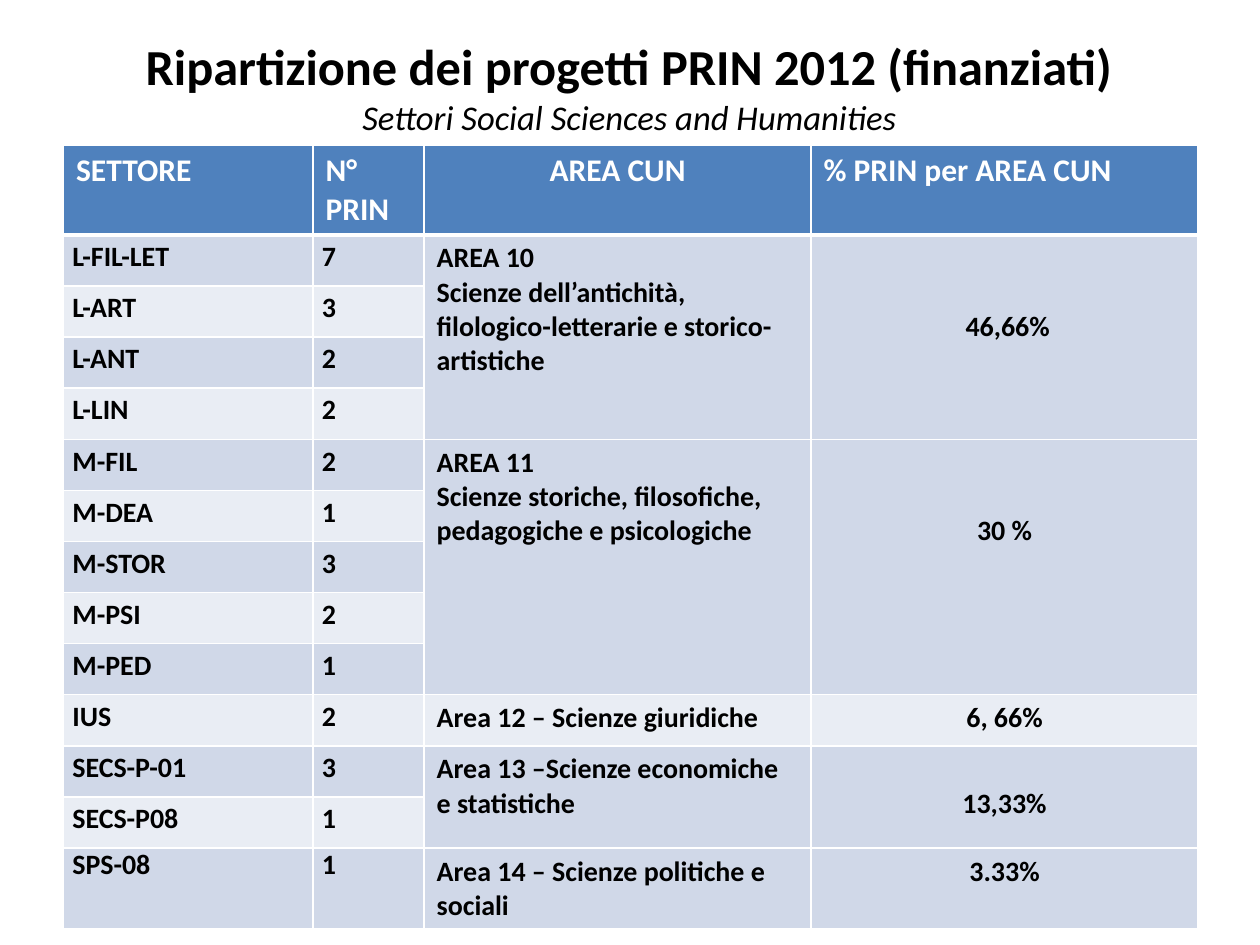
from copy import deepcopy
from dataclasses import dataclass

from lxml import etree
from pptx import Presentation
from pptx.dml.color import RGBColor
from pptx.enum.text import MSO_ANCHOR, MSO_AUTO_SIZE, PP_ALIGN
from pptx.oxml.ns import qn
from pptx.util import Cm, Pt

LEFT, CENTER = PP_ALIGN.LEFT, PP_ALIGN.CENTER
MIDDLE = MSO_ANCHOR.MIDDLE
NO_AUTOFIT = MSO_AUTO_SIZE.NONE
TITLE_ONLY = 5


@dataclass(frozen=True)
class Theme:
    font: str = "Calibri"
    ink: str = "000000"
    white: str = "FFFFFF"
    header: str = "4F81BD"
    bands: tuple[str, str] = ("E9EDF4", "D0D8E8")
    title_size: float = 28.8
    subtitle_size: float = 19.8
    header_size: float = 18
    body_size: float = 16
    grid_line: float = 1
    header_line: float = 3


@dataclass(frozen=True)
class Area:
    name: str
    share: str
    sectors: tuple[tuple[str, int], ...]
    share_line: int = 0  # text line of the cell on which the share stands
    sector_spacing: float = 1.15


THEME = Theme()
HEADERS = (("SETTORE", LEFT), ("N° PRIN", LEFT),
           ("AREA CUN", CENTER), ("% PRIN per AREA CUN", LEFT))
AREAS = (
    Area("AREA 10\nScienze dell’antichità, filologico-letterarie e storico-artistiche",
         " 46,66%", (("L-FIL-LET", 7), ("L-ART", 3), ("L-ANT", 2), ("L-LIN", 2)), 2),
    Area("AREA 11\nScienze storiche, filosofiche, pedagogiche e psicologiche",
         "30 %", (("M-FIL", 2), ("M-DEA", 1), ("M-STOR", 3), ("M-PSI", 2), ("M-PED", 1)), 2),
    Area("Area 12 – Scienze giuridiche", "6, 66%", (("IUS", 2),)),
    Area("Area 13 –Scienze economiche e statistiche", "13,33%",
         (("SECS-P-01", 3), ("SECS-P08", 1)), 1),
    Area("Area 14 – Scienze politiche e sociali", "3.33%", (("SPS-08", 1),),
         sector_spacing=1.0),
)
COLUMN_WIDTHS = (Cm(5.03), Cm(2.24), Cm(7.8), Cm(7.8))
HEADER_HEIGHT, ROW_HEIGHT, LAST_HEIGHT = Cm(1.78), Cm(1.03), Cm(1.63)
CELL_TOP, TEXT_LINE = Cm(0.13), Cm(0.69)


def style_run(run, size: float, color: str, bold: bool = True, italic: bool = False) -> None:
    run.font.name = THEME.font
    run.font.size = Pt(size)
    run.font.bold = bold
    run.font.italic = italic
    run.font.color.rgb = RGBColor.from_string(color)


def set_borders(cell, top: float, bottom: float) -> None:
    """Draw the white grid lines, placed before the fill as the schema requires."""
    properties = cell._tc.get_or_add_tcPr()
    widths = {"lnL": THEME.grid_line, "lnR": THEME.grid_line, "lnT": top, "lnB": bottom}
    for position, (side, width) in enumerate(widths.items()):
        line = etree.Element(qn(f"a:{side}"), w=str(Pt(width)))
        fill = etree.SubElement(line, qn("a:solidFill"))
        etree.SubElement(fill, qn("a:srgbClr"), val=THEME.white)
        properties.insert(position, line)


def write_cell(cell, text: str, size: float, color: str,
               align=LEFT, spacing: float = 1.0) -> None:
    cell.text_frame.text = text
    for paragraph in cell.text_frame.paragraphs:
        paragraph.alignment = align
        paragraph.line_spacing = spacing
        for run in paragraph.runs:
            style_run(run, size, color)


def paint_cell(cell, row: int, fill: str) -> None:
    cell.fill.solid()
    cell.fill.fore_color.rgb = RGBColor.from_string(fill)
    set_borders(cell,
                top=THEME.header_line if row == 1 else THEME.grid_line,
                bottom=THEME.header_line if row == 0 else THEME.grid_line)


def add_title(slide) -> None:
    title = slide.shapes.title
    title.left, title.top, title.width, title.height = Cm(1.27), Cm(0.76), Cm(22.83), Cm(1.96)
    frame = title.text_frame
    frame.auto_size = NO_AUTOFIT
    frame.vertical_anchor = MIDDLE
    heading = frame.paragraphs[0]
    heading.text = ("Ripartizione dei progetti PRIN 2012 (finanziati)\n"
                    "Settori Social Sciences and Humanities")
    heading.alignment = CENTER
    main_run, sub_run = heading.runs
    style_run(main_run, THEME.title_size, THEME.ink)
    style_run(sub_run, THEME.subtitle_size, THEME.ink, bold=False, italic=True)
    # The line break takes the heading's size, so that it does not stretch the line
    heading._p.find(qn("a:br")).append(deepcopy(main_run._r.rPr))


def add_area(table, area: Area, first_row: int) -> None:
    last_row = first_row + len(area.sectors) - 1
    for row, sector in enumerate(area.sectors, first_row):
        for column, value in enumerate(sector):
            cell = table.cell(row, column)
            cell.margin_left = cell.margin_right = Cm(0.18)
            cell.margin_top = cell.margin_bottom = 0
            write_cell(cell, str(value), THEME.body_size, THEME.ink,
                       spacing=area.sector_spacing)
            paint_cell(cell, row, THEME.bands[row % 2])
        for column in (2, 3):
            paint_cell(table.cell(row, column), row, THEME.bands[first_row % 2])

    if last_row > first_row:
        for column in (2, 3):
            table.cell(first_row, column).merge(table.cell(last_row, column))
    write_cell(table.cell(first_row, 2), area.name, THEME.body_size, THEME.ink)
    share = table.cell(first_row, 3)
    share.margin_top = CELL_TOP + area.share_line * TEXT_LINE
    write_cell(share, area.share, THEME.body_size, THEME.ink, CENTER)


def add_funding_table(slide) -> None:
    sector_count = sum(len(area.sectors) for area in AREAS)
    heights = [HEADER_HEIGHT] + [ROW_HEIGHT] * (sector_count - 1) + [LAST_HEIGHT]
    table = slide.shapes.add_table(len(heights), len(HEADERS), Cm(1.28), Cm(2.93),
                                   sum(COLUMN_WIDTHS), sum(heights)).table
    for column, width in zip(table.columns, COLUMN_WIDTHS):
        column.width = width
    for row, height in zip(table.rows, heights):
        row.height = height

    for column, (label, align) in enumerate(HEADERS):
        cell = table.cell(0, column)
        write_cell(cell, label, THEME.header_size, THEME.white, align)
        paint_cell(cell, 0, THEME.header)
    first_row = 1
    for area in AREAS:
        add_area(table, area, first_row)
        first_row += len(area.sectors)


def main() -> None:
    presentation = Presentation()
    presentation.slide_width, presentation.slide_height = Cm(25.4), Cm(19.05)
    slide = presentation.slides.add_slide(presentation.slide_layouts[TITLE_ONLY])
    add_title(slide)
    add_funding_table(slide)
    presentation.save("out.pptx")


if __name__ == "__main__":
    main()
